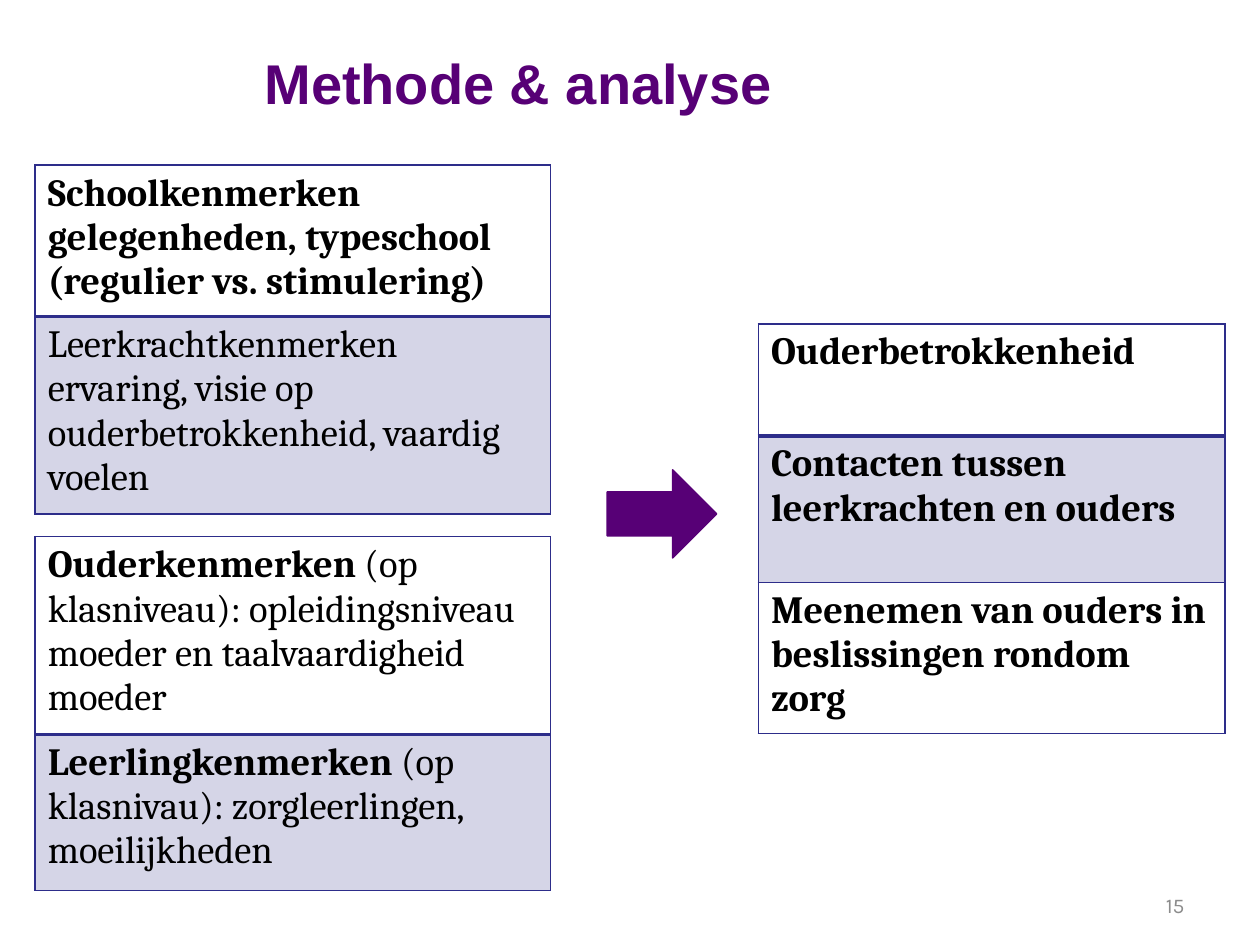
import pptx
import pptx.util
import pptx.dml.color
import pptx.enum.shapes
import pptx.enum.text
import pptx.oxml
import pptx.oxml.ns
import lxml.etree

Cm, Pt = pptx.util.Cm, pptx.util.Pt
RGB = pptx.dml.color.RGBColor.from_string
ALIGN = pptx.enum.text.PP_ALIGN
MID = pptx.enum.text.MSO_ANCHOR.MIDDLE
qn = pptx.oxml.ns.qn
NS = pptx.oxml.ns.nsdecls("a")
HUES = {"plum": "570076", "navy": "2D2D8A", "ink": "000000", "grey": "8C8C8C"}


def label(text, box, font, size, hue, bold, align):
    frame = slide.shapes.add_textbox(*map(Cm, box)).text_frame
    frame.word_wrap = True
    frame.vertical_anchor = MID
    para = frame.paragraphs[0]
    para.text = text
    para.alignment = align
    para.font.name, para.font.size, para.font.bold = font, Pt(size), bold
    para.font.color.rgb = RGB(HUES[hue])
    return frame


def border(cell, base):
    # Edges come before the fill in the cell properties
    props = cell._tc.get_or_add_tcPr()
    for spot, side in enumerate("LRTB"):
        width = Pt(base if side == "B" else 1)
        edge = pptx.oxml.parse_xml(
            f'<a:ln{side} {NS} w="{width}"><a:solidFill>'
            f'<a:srgbClr val="{HUES["navy"]}"/></a:solidFill></a:ln{side}>')
        props.insert(spot, edge)


deck = pptx.Presentation()
deck.slide_width, deck.slide_height = Cm(25.4), Cm(19.05)
slide = deck.slides.add_slide(deck.slide_layouts[6])

# Title and page number
title = label("Methode & analyse", (5.08, 0.79, 19.05, 1.9), "Arial", 32,
              "plum", True, ALIGN.LEFT)
title.margin_bottom = Cm(0.28)
label("15", (22.71, 17.73, 1.42, 1.02), "Karla", 12, "grey", False, ALIGN.RIGHT)

# Tables: left, top, width, then rows of (height, bold text, plain text)
tables = [
    (0.71, 3.33, 10.39, [
        (3.02, "Schoolkenmerken gelegenheden, typeschool "
               "(regulier vs. stimulering)", ""),
        (3.84, "", "Leerkrachtkenmerken ervaring, visie op "
                   "ouderbetrokkenheid, vaardig voelen")]),
    (15.29, 6.53, 9.4, [
        (2.26, "Ouderbetrokkenheid", ""),
        (2.95, "Contacten tussen leerkrachten en ouders", ""),
        (2.95, "Meenemen van ouders in beslissingen rondom zorg", "")]),
    (0.71, 10.82, 10.39, [
        (3.84, "Ouderkenmerken ", "(op klasniveau): opleidingsniveau "
                                  "moeder en taalvaardigheid moeder"),
        (3.15, "Leerlingkenmerken ", "(op klasnivau): zorgleerlingen, "
                                     "moeilijkheden")]),
]
for left, top, width, rows in tables:
    tall = sum(row[0] for row in rows)
    grid = slide.shapes.add_table(
        len(rows), 1, Cm(left), Cm(top), Cm(width), Cm(tall)).table
    grid.first_row = grid.horz_banding = False
    for i, (height, strong, plain) in enumerate(rows):
        grid.rows[i].height = Cm(height)
        cell = grid.cell(i, 0)
        para = cell.text_frame.paragraphs[0]
        for text, bold in ((strong, True), (plain, False)):
            if text:
                run = para.add_run()
                run.text = text
                run.font.bold = bold
        para.font.name, para.font.size = "Cambria", Pt(22)
        para.font.color.rgb = RGB(HUES["ink"])
        # Every second row is tinted
        if i % 2:
            cell.fill.solid()
            cell.fill.fore_color.rgb = RGB(HUES["navy"])
            tint = cell._tc.tcPr.find(".//" + qn("a:srgbClr"))
            lxml.etree.SubElement(tint, qn("a:alpha"), val="20000")
        else:
            cell.fill.background()
        border(cell, 2 if i == 0 else 1)

# Arrow from causes to outcome
arrow = slide.shapes.add_shape(
    pptx.enum.shapes.MSO_SHAPE.RIGHT_ARROW,
    Cm(12.24), Cm(9.47), Cm(2.21), Cm(1.78))
arrow.shadow.inherit = False
arrow.fill.solid()
arrow.fill.fore_color.rgb = RGB(HUES["plum"])
arrow.line.color.rgb = RGB(HUES["plum"])
arrow.line.width = Pt(0.75)

deck.save("out.pptx")
